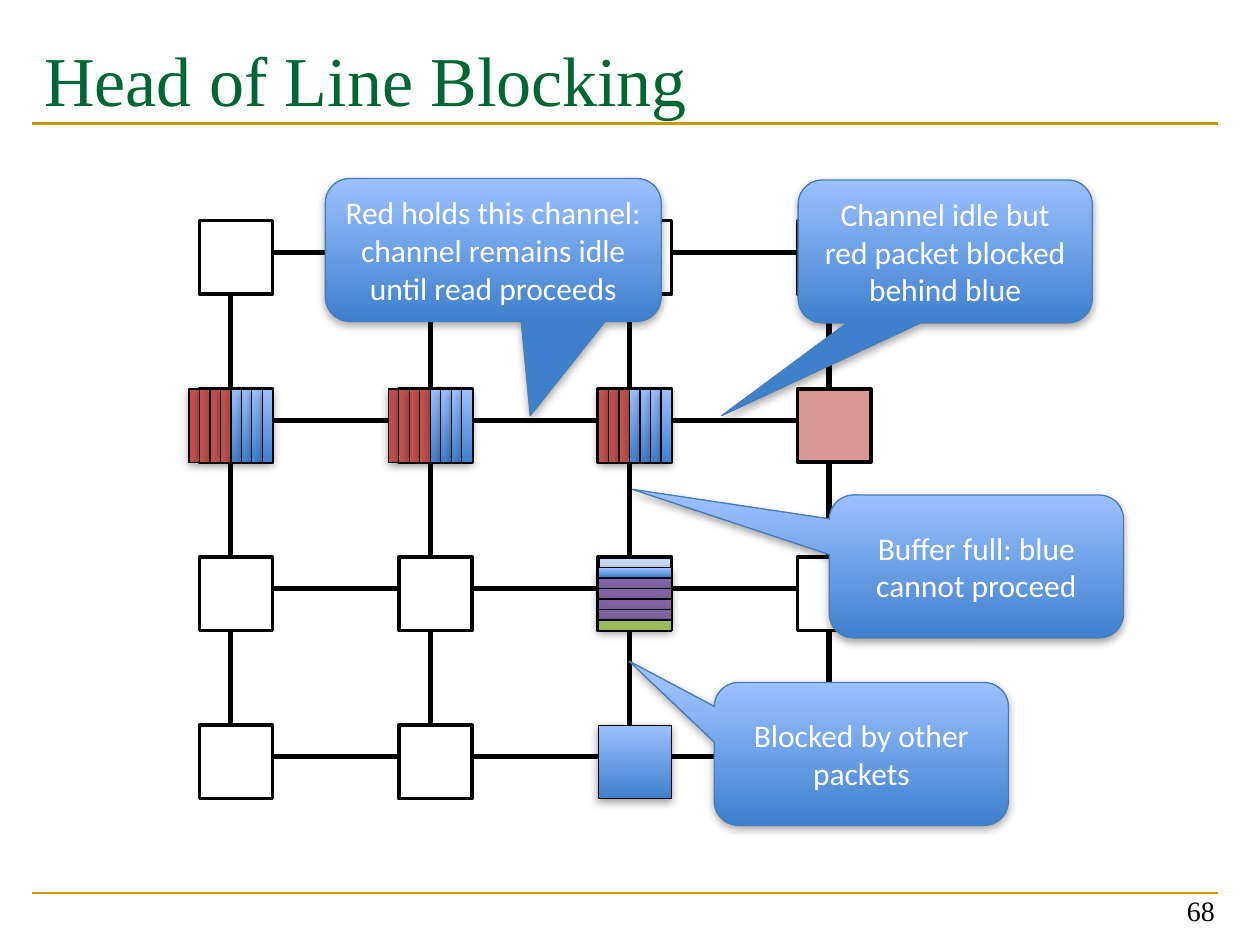
from lxml.etree import SubElement
from pptx import Presentation
from pptx.dml.color import RGBColor
from pptx.enum.shapes import MSO_CONNECTOR, MSO_SHAPE
from pptx.enum.text import MSO_ANCHOR, MSO_AUTO_SIZE, PP_ALIGN
from pptx.oxml.ns import qn
from pptx.util import Cm, Pt

BLACK = RGBColor(0x00, 0x00, 0x00)
WHITE = RGBColor(0xFF, 0xFF, 0xFF)
GREEN = RGBColor(0x00, 0x66, 0x33)
GOLD = RGBColor(0xCC, 0x99, 0x00)
BLUE_DARK = RGBColor(0x3F, 0x80, 0xCD)
BLUE_LIGHT = RGBColor(0x9B, 0xC1, 0xFF)
BLUE_EDGE = RGBColor(0x4A, 0x7E, 0xBB)
PALE_BLUE = RGBColor(0xC6, 0xD9, 0xF1)
PALE_RED = RGBColor(0xD9, 0x96, 0x94)
RED = RGBColor(0xC0, 0x50, 0x4D)
PURPLE = RGBColor(0x80, 0x64, 0xA2)
OLIVE = RGBColor(0x9B, 0xBB, 0x59)
BLUE = (BLUE_DARK, BLUE_LIGHT)  # gradient, bottom to top

# Mesh geometry in cm
COUNT = 4
LEFT, TOP = 4.02, 4.45
STEP_X, STEP_Y = 4.02, 3.39
NODE = 1.48
FLIT = NODE / 7
AXIS = 3 * FLIT  # links run three flits into a node


def node_position(column, row):
    return LEFT + column * STEP_X, TOP + row * STEP_Y


class SlideBuilder:
    title_font = "Times New Roman"
    body_font = "Calibri"

    def __init__(self, slide):
        self.slide = slide

    def set_text(self, shape, text, font, size, color, align, anchor):
        frame = shape.text_frame
        frame.text = text
        frame.word_wrap = True
        frame.auto_size = MSO_AUTO_SIZE.NONE
        frame.vertical_anchor = anchor
        paragraph = frame.paragraphs[0]
        paragraph.alignment = align
        for run in paragraph.runs:
            run.font.name = font
            run.font.size = Pt(size)
            run.font.color.rgb = color

    def title(self, text):
        shape = self.slide.shapes.title
        shape.left, shape.top = Cm(0.64), Cm(0.43)
        shape.width, shape.height = Cm(23.93), Cm(2.97)
        self.set_text(shape, text, self.title_font, 40, GREEN, PP_ALIGN.LEFT, MSO_ANCHOR.TOP)
        shape.text_frame.margin_top = Cm(0.3)

    def page_number(self, text):
        shape = self.slide.shapes.add_textbox(Cm(18.82), Cm(17.55), Cm(5.92), Cm(1.27))
        self.set_text(shape, text, self.title_font, 16, BLACK, PP_ALIGN.RIGHT, MSO_ANCHOR.BOTTOM)

    def line(self, x1, y1, x2, y2, color=BLACK, width=3):
        connector = self.slide.shapes.add_connector(
            MSO_CONNECTOR.STRAIGHT, Cm(x1), Cm(y1), Cm(x2), Cm(y2))
        connector.line.color.rgb = color
        connector.line.width = Pt(width)
        SubElement(connector._element.spPr, qn("a:effectLst"))

    def box(self, x, y, width, height, fill=None, edge=BLACK, edge_width=0.75,
            kind=MSO_SHAPE.RECTANGLE, shadow=True):
        shape = self.slide.shapes.add_shape(kind, Cm(x), Cm(y), Cm(width), Cm(height))
        shape.line.color.rgb = edge
        shape.line.width = Pt(edge_width)
        if fill is None:
            shape.fill.background()
        elif fill is BLUE:
            shape.fill.gradient()
            shape.fill.gradient_angle = 90
            for stop, color in zip(shape.fill.gradient_stops, fill):
                stop.color.rgb = color
        else:
            shape.fill.solid()
            shape.fill.fore_color.rgb = fill
        shape.shadow.inherit = False
        if shadow:
            self.drop_shadow(shape)
        return shape

    def drop_shadow(self, shape):
        effects = shape._element.spPr.find(qn("a:effectLst"))
        outer = SubElement(effects, qn("a:outerShdw"), blurRad=str(Pt(5)),
                           dist=str(Pt(1.8)), dir="5400000", rotWithShape="0")
        color = SubElement(outer, qn("a:srgbClr"), val=str(BLACK))
        SubElement(color, qn("a:alpha"), val="35000")

    def node(self, column, row, fill=None):
        x, y = node_position(column, row)
        if fill is BLUE:
            self.box(x, y, NODE, NODE, fill)
        else:
            self.box(x, y, NODE, NODE, fill, edge_width=2, shadow=False)

    def upright_flit(self, column, row, slot, fill):
        x, y = node_position(column, row)
        self.box(x + slot * FLIT, y, FLIT, NODE, fill)

    def flat_flit(self, column, row, slot, fill):
        x, y = node_position(column, row)
        self.box(x, y + slot * FLIT, NODE, FLIT, fill)

    def callout(self, text, x, y, tip_x, tip_y, width=5.93):
        shape = self.box(x, y, width, 2.88, BLUE, BLUE_EDGE,
                         kind=MSO_SHAPE.ROUNDED_RECTANGULAR_CALLOUT)
        for index, value in enumerate((tip_x, tip_y, 0.17)):
            shape.adjustments[index] = value
        self.set_text(shape, text, self.body_font, 18, WHITE, PP_ALIGN.CENTER, MSO_ANCHOR.MIDDLE)


def main():
    presentation = Presentation()
    presentation.slide_width, presentation.slide_height = Cm(25.4), Cm(19.05)
    builder = SlideBuilder(presentation.slides.add_slide(presentation.slide_layouts[5]))

    # Title, rules and page number
    for y in (18, 2.49):
        builder.line(0.64, y, 24.56, y, GOLD, 1.5)
    builder.title("Head of Line Blocking")
    builder.page_number("68")

    # Mesh of nodes and links
    node_fills = {(3, 1): PALE_RED, (2, 2): PALE_BLUE, (2, 3): BLUE}
    for row in range(COUNT):
        for column in range(COUNT):
            x, y = node_position(column, row)
            builder.node(column, row, node_fills.get((column, row)))
            if column < COUNT - 1:
                builder.line(x + NODE, y + AXIS, x + STEP_X, y + AXIS)
            if row < COUNT - 1:
                builder.line(x + AXIS, y + NODE, x + AXIS, y + STEP_Y)

    # Red packet queued behind blue in the second row
    for column, first_red in enumerate((-1, -1, 0)):
        for slot in range(first_red, 7):
            builder.upright_flit(column, 1, slot, RED if slot < 3 else BLUE)

    # Full buffer below
    for slot, fill in enumerate((BLUE, PURPLE, PURPLE, PURPLE, PURPLE, OLIVE), start=1):
        builder.flat_flit(2, 2, slot, fill)

    # Callouts
    builder.callout("Blocked by other packets", 14.4, 13.76, -0.79, -0.65)
    builder.callout("Channel idle but red packet blocked behind blue", 16.09, 3.63, -0.76, 1.15)
    builder.callout("Buffer full: blue cannot proceed", 16.72, 9.98, -1.17, -0.54)
    builder.callout("Red holds this channel: channel remains idle until read proceeds",
                    6.56, 3.6, 0.11, 1.16, width=6.77)

    presentation.save("out.pptx")


if __name__ == "__main__":
    main()
